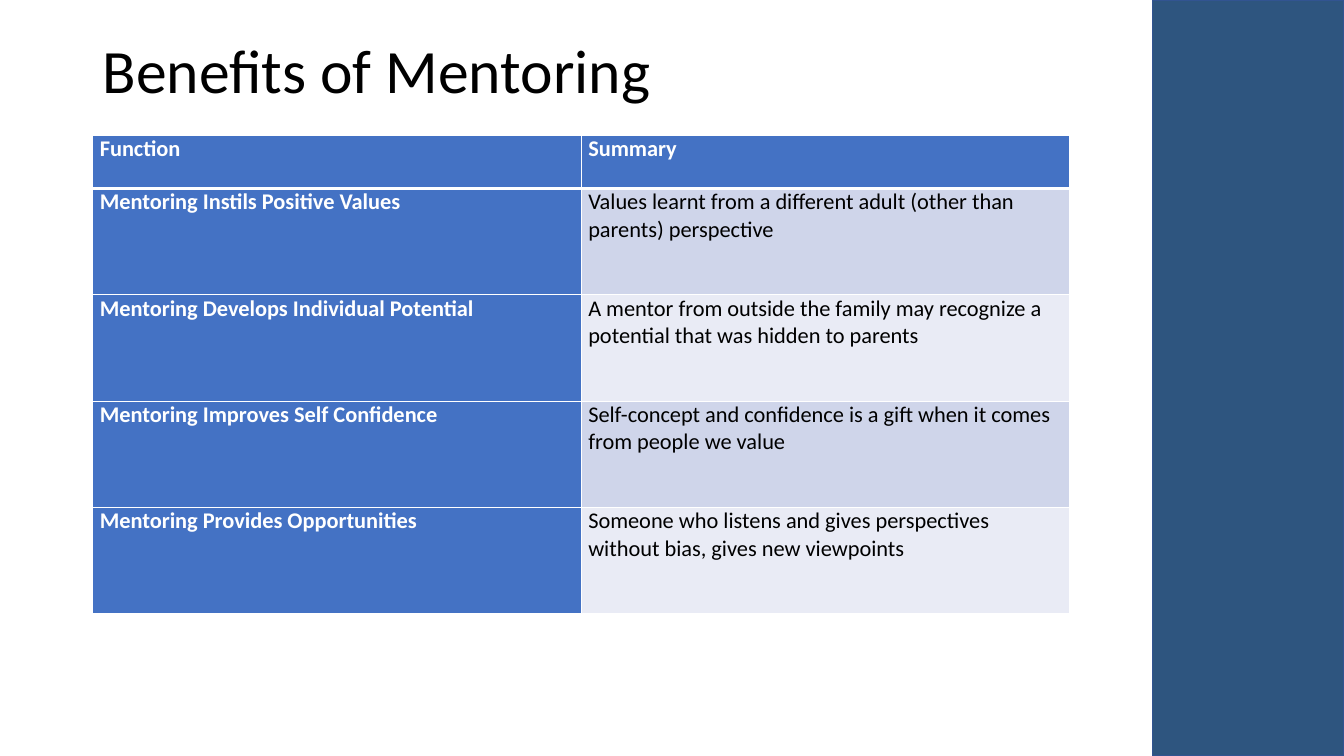
from dataclasses import dataclass

from lxml import etree
from pptx import Presentation
from pptx.dml.color import RGBColor
from pptx.enum.shapes import MSO_SHAPE
from pptx.enum.text import MSO_ANCHOR, PP_ALIGN
from pptx.oxml.ns import qn
from pptx.util import Inches, Pt

RECTANGLE = MSO_SHAPE.RECTANGLE
MIDDLE, TOP = MSO_ANCHOR.MIDDLE, MSO_ANCHOR.TOP
LEFT = PP_ALIGN.LEFT

# Content
TITLE = "Benefits of Mentoring"
ROWS = [
    ("Function", "Summary"),
    ("Mentoring Instils Positive Values",
     "Values learnt from a different adult (other than parents) perspective"),
    ("Mentoring Develops Individual Potential",
     "A mentor from outside the family may recognize a potential that was hidden to parents"),
    ("Mentoring Improves Self Confidence",
     "Self-concept and confidence is a gift when it comes from people we value"),
    ("Mentoring Provides Opportunities",
     "Someone who listens and gives perspectives without bias, gives new viewpoints"),
]


@dataclass(frozen=True)
class Theme:
    font: str = "Calibri"
    title_size: int = 44
    table_size: int = 16
    black: str = "000000"
    white: str = "FFFFFF"
    heading_fill: str = "4472C4"
    band_fills: tuple = ("CFD5EA", "E9EBF5")
    side_fill: str = "2E557F"
    side_line: str = "325491"
    thin_rule: int = 1
    thick_rule: int = 3


THEME = Theme()

# Layout in inches
SLIDE_WIDTH, SLIDE_HEIGHT = 13.33, 7.5
SIDE_WIDTH = 1.9
CONTENT_LEFT = 0.92
TABLE_TOP = 1.34
COLUMN_WIDTH = 4.845
HEADER_HEIGHT = 0.53
ROW_HEIGHT = 2 * HEADER_HEIGHT - 0.005
CELL_MARGIN = 0.07


def style_text(paragraph, size, color, bold=False):
    paragraph.alignment = LEFT
    font = paragraph.font
    font.name, font.size, font.bold = THEME.font, Pt(size), bold
    font.color.rgb = RGBColor.from_string(color)


def add_border(cell, side, width):
    properties = cell._tc.get_or_add_tcPr()
    line = etree.SubElement(properties, qn(f"a:ln{side}"), w=str(Pt(width)))
    fill = etree.SubElement(line, qn("a:solidFill"))
    etree.SubElement(fill, qn("a:srgbClr"), val=THEME.white)


def fill_cell(cell, text, row, column):
    is_heading = row == 0 or column == 0
    cell.margin_left = cell.margin_right = Inches(CELL_MARGIN)
    cell.margin_top = cell.margin_bottom = 0
    cell.vertical_anchor = TOP
    cell.text = text
    style_text(cell.text_frame.paragraphs[0], THEME.table_size,
               THEME.white if is_heading else THEME.black, is_heading)

    # The rule between the header and the first row is thicker
    for side in "LRTB":
        under_header = (row, side) in ((0, "B"), (1, "T"))
        add_border(cell, side, THEME.thick_rule if under_header else THEME.thin_rule)
    cell.fill.solid()
    color = THEME.heading_fill if is_heading else THEME.band_fills[(row - 1) % 2]
    cell.fill.fore_color.rgb = RGBColor.from_string(color)


def add_side_panel(slide):
    panel = slide.shapes.add_shape(
        RECTANGLE, Inches(SLIDE_WIDTH - SIDE_WIDTH), 0,
        Inches(SIDE_WIDTH), Inches(SLIDE_HEIGHT))
    panel.shadow.inherit = False
    panel.fill.solid()
    panel.fill.fore_color.rgb = RGBColor.from_string(THEME.side_fill)
    panel.line.color.rgb = RGBColor.from_string(THEME.side_line)
    panel.line.width = Pt(1)


def add_title(slide):
    box = slide.shapes.add_textbox(
        Inches(CONTENT_LEFT), 0, Inches(10.01), Inches(1.45))
    frame = box.text_frame
    frame.word_wrap = True
    frame.vertical_anchor = MIDDLE
    frame.text = TITLE
    paragraph = frame.paragraphs[0]
    paragraph.line_spacing = 0.9
    style_text(paragraph, THEME.title_size, THEME.black)


def add_benefits_table(slide):
    heights = [HEADER_HEIGHT] + [ROW_HEIGHT] * (len(ROWS) - 1)
    column_count = len(ROWS[0])
    table = slide.shapes.add_table(
        len(ROWS), column_count, Inches(CONTENT_LEFT), Inches(TABLE_TOP),
        Inches(column_count * COLUMN_WIDTH), Inches(sum(heights))).table
    for column in table.columns:
        column.width = Inches(COLUMN_WIDTH)
    for row, (texts, height) in enumerate(zip(ROWS, heights)):
        table.rows[row].height = Inches(height)
        for column, text in enumerate(texts):
            fill_cell(table.cell(row, column), text, row, column)


def main():
    presentation = Presentation()
    presentation.slide_width = Inches(SLIDE_WIDTH)
    presentation.slide_height = Inches(SLIDE_HEIGHT)
    slide = presentation.slides.add_slide(presentation.slide_layouts[6])
    add_side_panel(slide)
    add_title(slide)
    add_benefits_table(slide)
    presentation.save("out.pptx")


if __name__ == "__main__":
    main()
